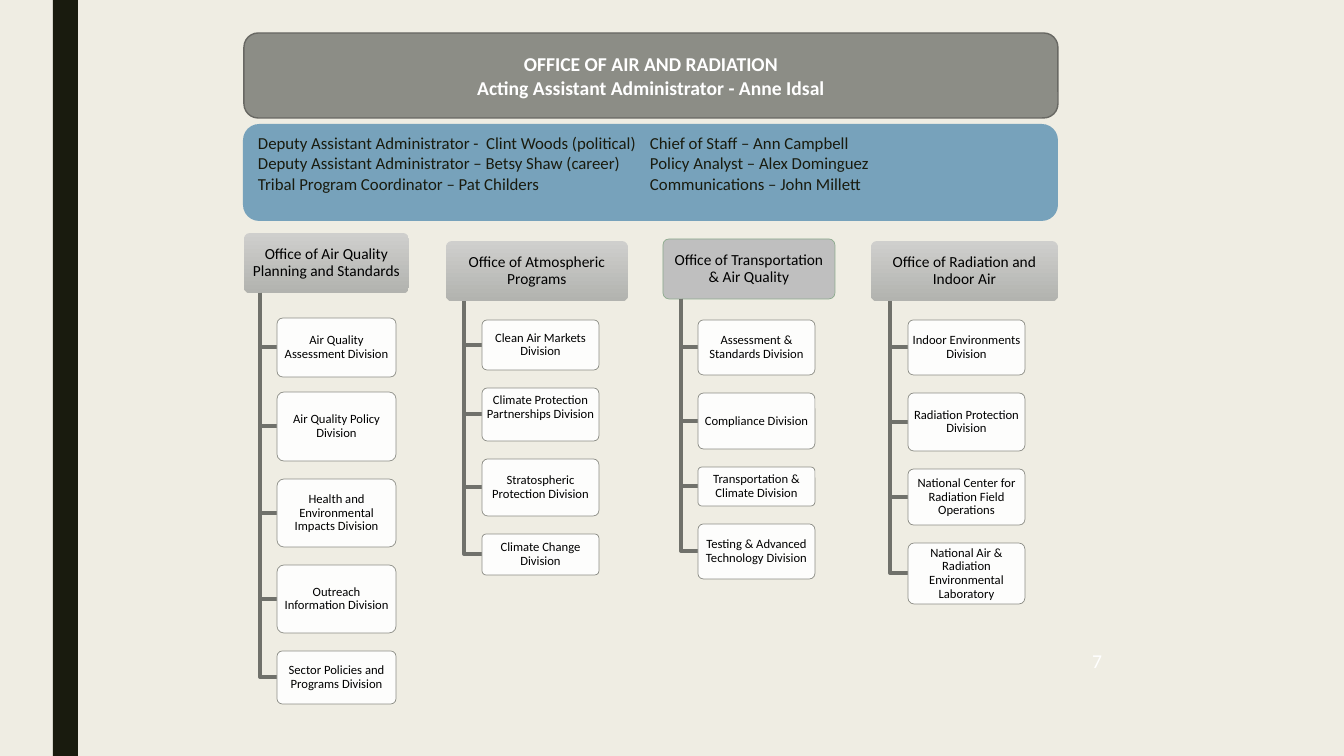
from dataclasses import dataclass

from lxml import etree
from pptx import Presentation
from pptx.dml.color import RGBColor
from pptx.enum.shapes import MSO_SHAPE
from pptx.enum.text import MSO_ANCHOR, MSO_AUTO_SIZE, PP_ALIGN
from pptx.oxml.ns import qn
from pptx.util import Pt

EMU_PER_PX = 914400 / 100.8
RECTANGLE, ROUNDED = MSO_SHAPE.RECTANGLE, MSO_SHAPE.ROUNDED_RECTANGLE
TOP, MIDDLE = MSO_ANCHOR.TOP, MSO_ANCHOR.MIDDLE
LEFT, CENTER = PP_ALIGN.LEFT, PP_ALIGN.CENTER
NO_AUTOFIT = MSO_AUTO_SIZE.NONE
TWO_CONTENT_LAYOUT = 3
DIVISION_GAP = 18


@dataclass(frozen=True)
class Theme:
    """Colours, font and type sizes of the slide."""
    font: str = "Calibri"
    background: str = "EFEDE3"
    dark: str = "191B0E"
    white: str = "FFFFFF"
    black: str = "000000"
    heading: str = "8C8D86"
    heading_line: str = "686863"
    staff: str = "77A2BB"
    office_top: str = "CFCFCD"
    office_bottom: str = "B2B3AF"
    office_plain: str = "BFBFBF"
    office_line: str = "8DAB8E"
    branch: str = "70716B"
    heading_size: int = 14
    staff_size: int = 12
    office_size: int = 11
    division_size: int = 9
    number_size: int = 14


@dataclass(frozen=True)
class Division:
    """One division box; lift raises its text."""
    name: str
    height: int
    gap: int = DIVISION_GAP
    lift: int = 0


@dataclass(frozen=True)
class Office:
    """One office with the column of divisions below it."""
    name: str
    box: tuple
    stem: int
    column: tuple
    divisions: tuple
    plain: bool = False


THEME = Theme()
HEADING = ("OFFICE OF AIR AND RADIATION", "Acting Assistant Administrator - Anne Idsal")
STAFF_LEFT = (
    "Deputy Assistant Administrator -  Clint Woods (political)",
    "Deputy Assistant Administrator – Betsy Shaw (career)",
    "Tribal Program Coordinator – Pat Childers",
)
STAFF_RIGHT = (
    "Chief of Staff – Ann Campbell",
    "Policy Analyst – Alex Dominguez",
    "Communications – John Millett",
)
OFFICES = (
    Office("Office of Air Quality Planning and Standards", (244, 233, 165, 60), 260, (277, 318, 119), (
        Division("Air Quality Assessment Division", 59, gap=15),
        Division("Air Quality Policy Division", 69),
        Division("Health and Environmental Impacts Division", 68),
        Division("Outreach Information Division", 68),
        Division("Sector Policies and Programs Division", 53))),
    Office("Office of Atmospheric Programs", (446, 241, 182, 60), 464, (482, 320, 117), (
        Division("Clean Air Markets Division", 50),
        Division("Climate Protection Partnerships Division", 53, lift=14),
        Division("Stratospheric Protection Division", 57),
        Division("Climate Change Division", 41))),
    Office("Office of Transportation & Air Quality", (663, 239, 172, 60), 681, (698, 320, 117), (
        Division("Assessment & Standards Division", 55),
        Division("Compliance Division", 56),
        Division("Transportation & Climate Division", 39),
        Division("Testing & Advanced Technology Division", 55)), plain=True),
    Office("Office of Radiation and Indoor Air", (871, 241, 187, 60), 890, (908, 320, 117), (
        Division("Indoor Environments Division", 55),
        Division("Radiation Protection Division", 58),
        Division("National Center for Radiation Field Operations", 56),
        Division("National Air & Radiation Environmental Laboratory", 61))),
)


def px(length):
    """Turn a length in px into EMU."""
    return round(length * EMU_PER_PX)


def color(value):
    """Turn a hex string into a colour."""
    return RGBColor.from_string(value)


def write_text(shape, lines, size, ink, align=CENTER, anchor=MIDDLE,
               insets=(0, 0, 0, 0), bold=False, spacing=1.0):
    """Write one paragraph per line into a shape."""
    frame = shape.text_frame
    frame.word_wrap = True
    frame.auto_size = NO_AUTOFIT
    frame.vertical_anchor = anchor
    frame.margin_left, frame.margin_top, frame.margin_right, frame.margin_bottom = map(px, insets)
    for index, line in enumerate(lines):
        paragraph = frame.add_paragraph() if index else frame.paragraphs[0]
        paragraph.alignment = align
        paragraph.line_spacing = spacing
        paragraph.space_before = paragraph.space_after = Pt(0)
        run = paragraph.add_run()
        run.text = line
        run.font.name = THEME.font
        run.font.size = Pt(size)
        run.font.bold = bold
        run.font.color.rgb = color(ink)


def add_box(slide, box, fill, line=None, line_width=0.5, kind=ROUNDED, corner=None):
    """Add a flat filled box."""
    shape = slide.shapes.add_shape(kind, *map(px, box))
    shape.shadow.inherit = False
    shape.fill.solid()
    shape.fill.fore_color.rgb = color(fill)
    if corner is not None:
        shape.adjustments[0] = corner
    if line:
        shape.line.color.rgb = color(line)
        shape.line.width = Pt(line_width)
    else:
        shape.line.fill.background()
    return shape


def fill_placeholder(placeholder, box, lines, size, ink, **formatting):
    """Move a placeholder to the front and fill it with unbulleted text."""
    placeholder.left, placeholder.top, placeholder.width, placeholder.height = map(px, box)
    element = placeholder.element
    element.getparent().append(element)
    write_text(placeholder, lines, size, ink, **formatting)
    for paragraph in placeholder.text_frame.paragraphs:
        properties = paragraph._p.get_or_add_pPr()
        properties.set("marL", "0")
        properties.set("indent", "0")
        etree.SubElement(properties, qn("a:buNone"))


def add_branch(slide, stem, top, end, middle):
    """Add the elbow from an office down to a division."""
    builder = slide.shapes.build_freeform(stem, top, scale=EMU_PER_PX)
    builder.add_line_segments([(stem, middle), (end, middle)], close=False)
    branch = builder.convert_to_shape()
    branch.shadow.inherit = False
    branch.fill.background()
    branch.line.color.rgb = color(THEME.branch)
    branch.line.width = Pt(2.75)


def add_division(slide, division, box):
    """Add a slightly transparent division box."""
    shape = add_box(slide, box, THEME.white, THEME.heading, corner=0.1)
    fill_color = shape.element.spPr.find(qn("a:solidFill")).find(qn("a:srgbClr"))
    etree.SubElement(fill_color, qn("a:alpha")).set("val", "90000")
    write_text(shape, [division.name], THEME.division_size, THEME.black,
               insets=(2, 1, 2, 1 + division.lift), spacing=0.9)


def add_office(slide, office):
    """Add an office box and its branches and divisions."""
    line = THEME.office_line if office.plain else None
    shape = add_box(slide, office.box, THEME.office_plain, line, corner=0.1)
    if not office.plain:
        shape.fill.gradient()
        shape.fill.gradient_angle = 270
        for stop, value in zip(shape.fill.gradient_stops, (THEME.office_top, THEME.office_bottom)):
            stop.color.rgb = color(value)
    write_text(shape, [office.name], THEME.office_size, THEME.black, insets=(3, 2, 3, 2), spacing=0.9)
    bottom = office.box[1] + office.box[3]
    left, top, width = office.column
    for division in office.divisions:
        add_branch(slide, office.stem, bottom, left, top + division.height // 2)
        add_division(slide, division, (left, top, width, division.height))
        top += division.height + division.gap


def main():
    """Build the organisation chart slide."""
    presentation = Presentation()
    presentation.slide_width, presentation.slide_height = px(1344), px(756)
    slide = presentation.slides.add_slide(presentation.slide_layouts[TWO_CONTENT_LAYOUT])
    title, staff_left, staff_right = list(slide.placeholders)[:3]
    slide.background.fill.solid()
    slide.background.fill.fore_color.rgb = color(THEME.background)
    add_box(slide, (53, 0, 25, 756), THEME.dark, kind=RECTANGLE)
    for office in OFFICES:
        add_office(slide, office)
    heading_box = (244, 33, 814, 85)
    add_box(slide, heading_box, THEME.heading, THEME.heading_line, 1)
    add_box(slide, (243, 124, 815, 97), THEME.staff)
    fill_placeholder(title, heading_box, HEADING, THEME.heading_size, THEME.white, bold=True)
    for placeholder, left, lines in ((staff_left, 258, STAFF_LEFT), (staff_right, 650, STAFF_RIGHT)):
        fill_placeholder(placeholder, (left, 133, 390, 80), lines, THEME.staff_size, THEME.dark,
                         align=LEFT, anchor=TOP)
    number = slide.shapes.add_textbox(*map(px, (1077, 646, 40, 30)))
    write_text(number, ["7"], THEME.number_size, THEME.white)
    presentation.save("out.pptx")


if __name__ == "__main__":
    main()
